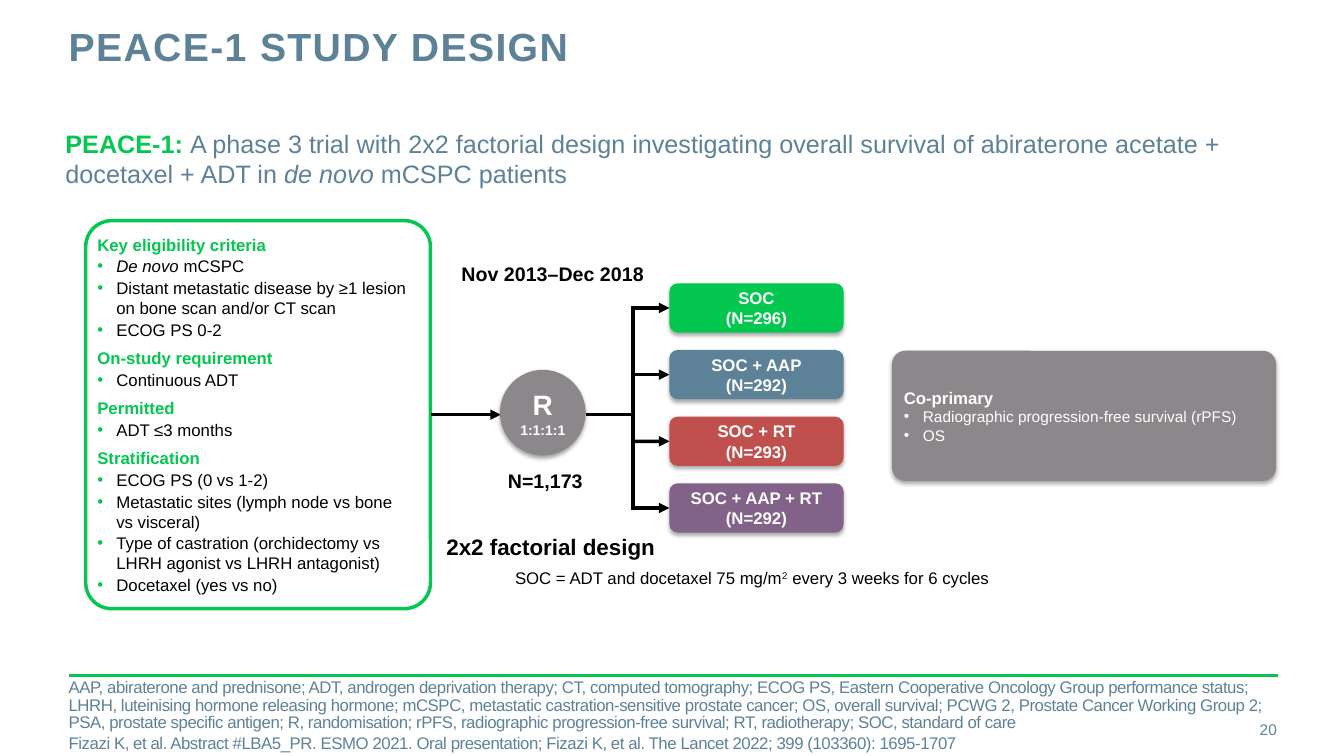
from copy import deepcopy
from lxml import etree
from pptx import Presentation
from pptx.dml.color import RGBColor
from pptx.enum import shapes, text
from pptx.oxml import parse_xml
from pptx.oxml.ns import nsdecls, qn
from pptx.util import Cm, Pt

GREEN = RGBColor(0x03, 0xC7, 0x4F)
BLUE = RGBColor(0x5D, 0x82, 0x98)
RED = RGBColor(0xC0, 0x50, 0x4D)
PURPLE = RGBColor(0x82, 0x62, 0x88)
GREY = RGBColor(0x8B, 0x87, 0x8B)
BLACK = RGBColor(0, 0, 0)
WHITE = RGBColor(0xFF, 0xFF, 0xFF)
LEFT, CENTER, RIGHT = text.PP_ALIGN.LEFT, text.PP_ALIGN.CENTER, text.PP_ALIGN.RIGHT
TOP, MIDDLE = text.MSO_ANCHOR.TOP, text.MSO_ANCHOR.MIDDLE
ROUNDED, OVAL = shapes.MSO_SHAPE.ROUNDED_RECTANGLE, shapes.MSO_SHAPE.OVAL


def write(s, paragraphs, size, color, bold=False, align=LEFT, anchor=TOP,
          margins=(0, 0, 0, 0), wrap=True):
    tf = s.text_frame
    tf.word_wrap = wrap
    tf.auto_size = text.MSO_AUTO_SIZE.NONE if wrap else text.MSO_AUTO_SIZE.SHAPE_TO_FIT_TEXT
    tf.vertical_anchor = anchor
    tf.margin_left, tf.margin_top, tf.margin_right, tf.margin_bottom = map(Cm, margins)
    for i, runs in enumerate(paragraphs):
        p = tf.paragraphs[0] if i == 0 else tf.add_paragraph()
        p.alignment = align
        for content, changes in runs:
            for n, part in enumerate(content.split("\n")):
                if n:
                    p.add_line_break()
                    p._p[-1].append(deepcopy(r._r.rPr))
                r = p.add_run()
                r.text = part
                r.font.name = "Arial"
                r.font.size = Pt(changes.get("size", size))
                r.font.bold = changes.get("bold", bold)
                r.font.italic = changes.get("italic", False)
                r.font.color.rgb = changes.get("color", color)
                for name in ("spc", "baseline"):
                    if name in changes:
                        r._r.get_or_add_rPr().set(name, changes[name])
    return tf.paragraphs


def add_line(x1, y1, x2, y2, color=BLACK, width=2.5, arrow=False):
    s = sp.add_connector(shapes.MSO_CONNECTOR.STRAIGHT, Cm(x1), Cm(y1), Cm(x2), Cm(y2))
    s.line.color.rgb = color
    s.line.width = Pt(width)
    if arrow:
        etree.SubElement(s.line._get_or_add_ln(), qn("a:tailEnd"), type="triangle")
    etree.SubElement(s._element.spPr, qn("a:effectLst"))
    return s


prs = Presentation()
prs.slide_width, prs.slide_height = Cm(33.87), Cm(19.05)
slide = prs.slides.add_slide(prs.slide_layouts[5])
sp = slide.shapes

title = sp.title
title.left, title.top, title.width, title.height = Cm(1.73), Cm(0.69), Cm(24.28), Cm(2.24)
p = write(title, [[("PEACE-1 STUDY DESIGN", {"spc": "100"})]], 28, BLUE, True)[0]
p.line_spacing = Pt(30)

subtitle = sp.add_textbox(Cm(1.65), Cm(3.23), Cm(30.45), Cm(1.98))
write(subtitle, [[
    ("PEACE-1: ", {"color": GREEN, "bold": True}),
    ("A phase 3 trial with 2x2 factorial design investigating overall survival of "
     "abiraterone acetate + docetaxel + ADT in ", {}),
    ("de novo ", {"italic": True}),
    ("mCSPC patients", {})]], 18, BLUE)

add_line(1.73, 17.02, 32.21, 17.02, GREEN, 2)
footnote = sp.add_textbox(Cm(1.73), Cm(17.55), Cm(30.43), Cm(1.02))
notes = [
    "AAP, abiraterone and prednisone; ADT, androgen deprivation therapy; CT, computed "
    "tomography; ECOG PS, Eastern Cooperative Oncology Group performance status; LHRH, "
    "luteinising hormone releasing hormone; mCSPC, metastatic castration-sensitive prostate "
    "cancer; OS, overall survival; PCWG 2, Prostate Cancer Working Group 2; PSA, prostate "
    "specific antigen; R, randomisation; rPFS, radiographic progression-free survival; RT, "
    "radiotherapy; SOC, standard of care",
    "Fizazi K, et al. Abstract #LBA5_PR. ESMO 2021. Oral presentation; Fizazi K, et al. "
    "The Lancet 2022; 399 (103360): 1695-1707"]
for p in write(footnote, [[(note, {"spc": "-30"})] for note in notes], 12, BLUE, anchor=MIDDLE):
    p.line_spacing = 0.85
    p.space_after = Pt(3)

page = sp.add_textbox(Cm(30), Cm(17.86), Cm(2.18), Cm(1.02))
write(page, [[("20", {})]], 11, BLUE, align=RIGHT, anchor=MIDDLE)

labels = [
    (11.38, 6.48, 5.13, 0.86, 14, True, [("Nov 2013–Dec 2018", {})]),
    (12.55, 11.68, 2.41, 0.86, 14, True, [("N=1,173", {})]),
    (11, 13.31, 5.84, 0.94, 16, True, [("2x2 factorial design", {})]),
    (12.73, 14.17, 12.6, 0.76, 12, False, [
        ("SOC = ADT and docetaxel 75 mg/m", {}), ("2", {"baseline": "30000"}),
        (" every 3 weeks for 6 cycles", {})]),
]
for x, y, w, h, size, bold, runs in labels:
    s = sp.add_textbox(Cm(x), Cm(y), Cm(w), Cm(h))
    write(s, [runs], size, BLACK, bold, margins=(0.25, 0.13, 0.25, 0.13), wrap=False)

eligibility = sp.add_shape(ROUNDED, Cm(2.16), Cm(5.56), Cm(8.69), Cm(9.78))
eligibility.adjustments[0] = 0.076
eligibility.shadow.inherit = False
eligibility.fill.solid()
eligibility.fill.fore_color.rgb = WHITE
eligibility.line.color.rgb = GREEN
eligibility.line.width = Pt(2.5)
criteria = [
    ("Key eligibility criteria", [
        [("De novo ", {"italic": True}), ("mCSPC", {})],
        [("Distant metastatic disease by ≥1 lesion on bone scan and/or CT scan", {})],
        [("ECOG PS 0-2", {})]]),
    ("On-study requirement", [[("Continuous ADT", {})]]),
    ("Permitted", [[("ADT ≤3 months", {})]]),
    ("Stratification", [
        [("ECOG PS (0 vs 1-2)", {})],
        [("Metastatic sites (lymph node vs bone \nvs visceral)", {})],
        [("Type of castration (orchidectomy vs LHRH agonist vs LHRH antagonist)", {})],
        [("Docetaxel (yes vs no)", {})]]),
]
lines, headings = [], []
for heading, items in criteria:
    headings.append(len(lines))
    lines += [[(heading, {"color": GREEN, "bold": True})]] + items
criteria_lines = write(eligibility, lines, 12, BLACK, anchor=MIDDLE, margins=(0.1, 0, 0, 0))
for i, p in enumerate(criteria_lines):
    if i:
        p.space_before = Pt(6 if i in headings else 1)

endpoints = sp.add_shape(ROUNDED, Cm(22.48), Cm(8.84), Cm(9.68), Cm(3.28))
endpoints.adjustments[0] = 0.103
endpoint_lines = write(endpoints, [
    [("Co-primary", {"size": 12, "bold": True})],
    [("Radiographic progression-free survival (rPFS)", {})],
    [("OS", {})]], 11, WHITE, anchor=MIDDLE, margins=(0.2, 0, 0, 0))

bullets = [(p, GREEN) for i, p in enumerate(criteria_lines) if i not in headings]
bullets += [(p, WHITE) for p in endpoint_lines[1:]]
for p, color in bullets:
    pPr = p._p.get_or_add_pPr()
    pPr.set("marL", str(Cm(0.48)))
    pPr.set("indent", str(-Cm(0.48)))
    etree.SubElement(etree.SubElement(pPr, qn("a:buClr")), qn("a:srgbClr"), val=str(color))
    etree.SubElement(pPr, qn("a:buFont"), typeface="Arial")
    etree.SubElement(pPr, qn("a:buChar"), char="•")

spine_x = 15.95
stem_y = 10.45
add_line(14.76, stem_y, spine_x, stem_y)
add_line(spine_x, 7.72, spine_x, 12.85)
cards = [(endpoints, GREY)]
arms = [("SOC", 296, GREEN), ("SOC + AAP", 292, BLUE),
        ("SOC + RT", 293, RED), ("SOC + AAP + RT", 292, PURPLE)]
for i, (name, count, color) in enumerate(arms):
    y = 7.14 + 1.68 * i
    s = sp.add_shape(ROUNDED, Cm(16.87), Cm(y), Cm(4.39), Cm(1.24))
    write(s, [[(f"{name}\n(N={count})", {})]], 12, WHITE, True, CENTER, MIDDLE)
    add_line(spine_x, y + 0.62, 16.87, y + 0.62, arrow=True).end_connect(s, 1)
    cards.append((s, color))

add_line(10.85, stem_y, 12.62, stem_y, arrow=True).begin_connect(eligibility, 3)
randomisation = sp.add_shape(OVAL, Cm(12.6), Cm(9.32), Cm(2.16), Cm(2.16))
write(randomisation, [[("R\n", {"size": 20}), ("1:1:1:1", {})]], 10, WHITE, True,
      CENTER, MIDDLE, (0.1, 0.13, 0.1, 0.13))
cards.append((randomisation, GREY))

for s, color in cards:
    s.fill.solid()
    s.fill.fore_color.rgb = color
    s.line.fill.background()
    s.shadow.inherit = False
    s._element.spPr.find(qn("a:effectLst")).append(parse_xml(
        f'<a:outerShdw {nsdecls("a")} blurRad="{Pt(3.1)}" dist="{Pt(1.8)}" dir="5400000" '
        'rotWithShape="0"><a:srgbClr val="000000"><a:alpha val="35000"/></a:srgbClr>'
        '</a:outerShdw>'))

prs.save("out.pptx")
